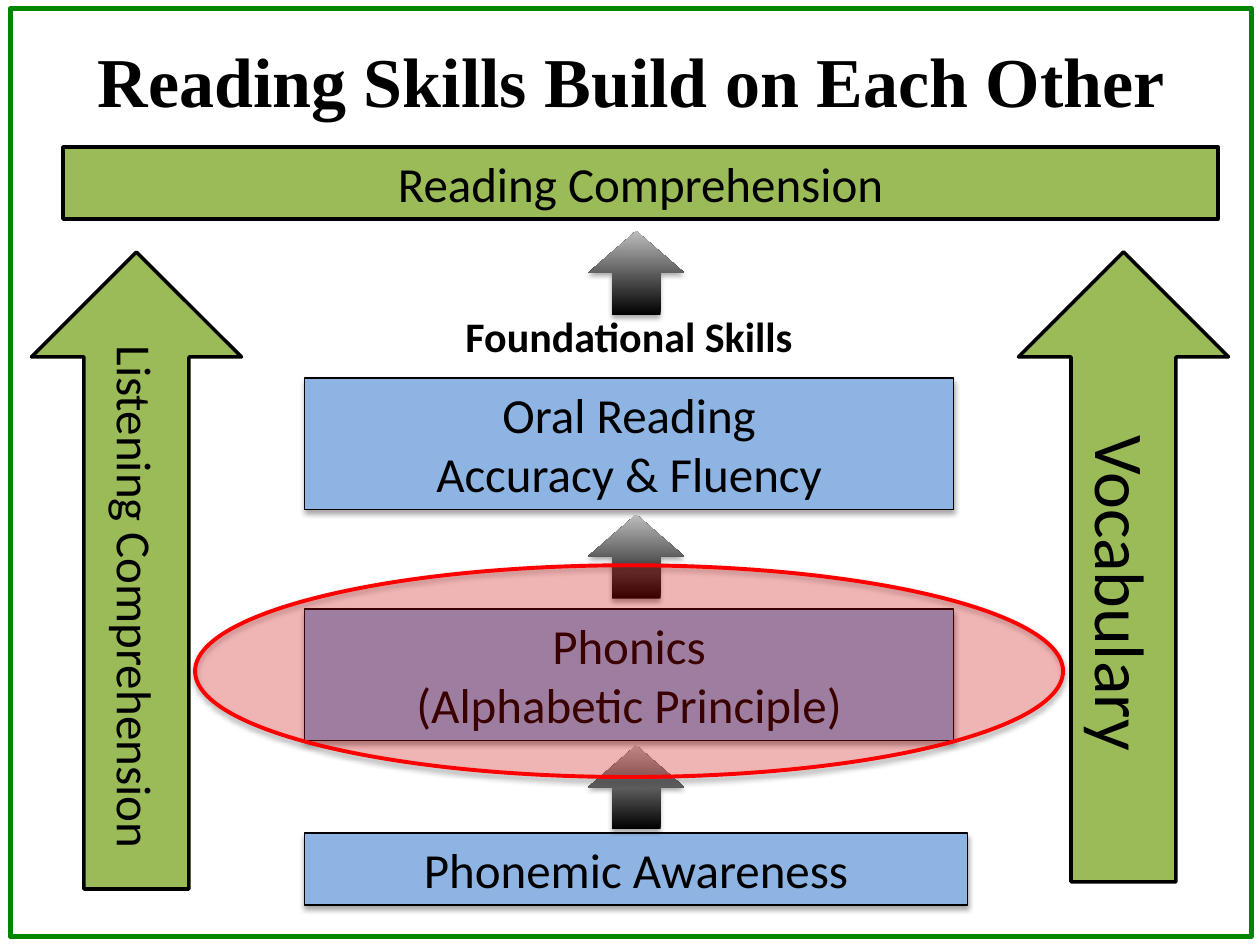
from lxml.etree import SubElement
from pptx import Presentation
from pptx.dml.color import RGBColor
from pptx.enum.shapes import MSO_SHAPE as Preset
from pptx.enum.text import MSO_ANCHOR as Anchor, MSO_AUTO_SIZE as AutoSize, PP_ALIGN as Align
from pptx.oxml.ns import qn
from pptx.util import Pt

COLORS = {
    "frame": "008501", "black": "000000", "grey": "BDBDBD",
    "green": "9BBB59", "blue": "8EB4E3", "red": "FF0000",
}
RGB = {name: RGBColor.from_string(value) for name, value in COLORS.items()}


def add_shape(preset, box, fill=None, line=None, weight=1, shadow=False):
    shape = page.shapes.add_shape(preset, *map(Pt, box))
    if fill:
        shape.fill.solid()
        shape.fill.fore_color.rgb = RGB[fill]
    else:
        shape.fill.background()
    if line:
        shape.line.color.rgb = RGB[line]
        shape.line.width = Pt(weight)
    else:
        shape.line.fill.background()
    shape.shadow.inherit = False
    if shadow:
        effects = shape.element.spPr.find(qn("a:effectLst"))
        outer = SubElement(effects, qn("a:outerShdw"), blurRad=str(Pt(3.1)),
                           dist=str(Pt(1.8)), dir="5400000", rotWithShape="0")
        color = SubElement(outer, qn("a:srgbClr"), val=COLORS["black"])
        SubElement(color, qn("a:alpha"), val="35000")
    return shape


def write(shape, lines, size, font="Calibri", bold=False, anchor=Anchor.TOP,
          auto_size=AutoSize.SHAPE_TO_FIT_TEXT):
    frame = shape.text_frame
    frame.text = "\n".join(lines)
    settings = {"word_wrap": True, "vertical_anchor": anchor, "auto_size": auto_size}
    for name, value in settings.items():
        setattr(frame, name, value)
    for para in frame.paragraphs:
        para.alignment = Align.CENTER
        for span in para.runs:
            span.font.color.rgb = RGB["black"]
            for name, value in {"name": font, "size": Pt(size), "bold": bold}.items():
                setattr(span.font, name, value)


deck = Presentation()
deck.slide_width, deck.slide_height = Pt(720), Pt(540)
page = deck.slides.add_slide(deck.slide_layouts[5])

# Title and frame
title = page.shapes.title
for name, value in {"left": 1.4, "top": 18, "width": 718.6, "height": 55.4}.items():
    setattr(title, name, Pt(value))
write(title, ["Reading Skills Build on Each Other"], 40, "Times New Roman", bold=True)
add_shape(Preset.RECTANGLE, (5.8, 5, 709.2, 530), line="frame", weight=3)

# Side arrows with vertical text
for label, left, height, size in [("Vocabulary", 582, 360, 40),
                                  ("Listening Comprehension", 18, 364, 28)]:
    arrow = add_shape(Preset.UP_ARROW, (left, 144, 120, height), "green", "black", 2)
    write(arrow, [label], size, anchor=Anchor.MIDDLE, auto_size=AutoSize.NONE)
    arrow.element.txBody.bodyPr.set("vert", "vert")

# Skill blocks, from bottom to top
for lines, top, width, height in [
    (["Phonemic Awareness"], 476, 379, 41.2),
    (["Phonics", "(Alphabetic Principle)"], 348, 371, 75.1),
    (["Oral Reading", "Accuracy & Fluency"], 216, 371, 75.1),
]:
    block = add_shape(Preset.RECTANGLE, (174, top, width, height),
                      "blue", "black", 0.75, shadow=True)
    write(block, lines, 28)

heading = page.shapes.add_textbox(Pt(174), Pt(174), Pt(371), Pt(36.4))
write(heading, ["Foundational Skills"], 24, bold=True)

goal = add_shape(Preset.RECTANGLE, (36, 84, 660, 41.2), "green", "black", 2)
write(goal, ["Reading Comprehension"], 28)

# Steps between the blocks
for top in (132, 294, 426):
    step = add_shape(Preset.UP_ARROW, (336, top, 55.2, 48), shadow=True)
    step.fill.gradient()
    step.fill.gradient_angle = 90
    for stop, color in zip(step.fill.gradient_stops, ("black", "grey")):
        stop.color.rgb = RGB[color]

# Highlight over phonics
highlight = add_shape(Preset.OVAL, (111.5, 323, 496, 121), "red", "red", 2.25, shadow=True)
tint = highlight.element.spPr.find(qn("a:solidFill")).find(qn("a:srgbClr"))
SubElement(tint, qn("a:alpha"), val="23000")

deck.save("out.pptx")
